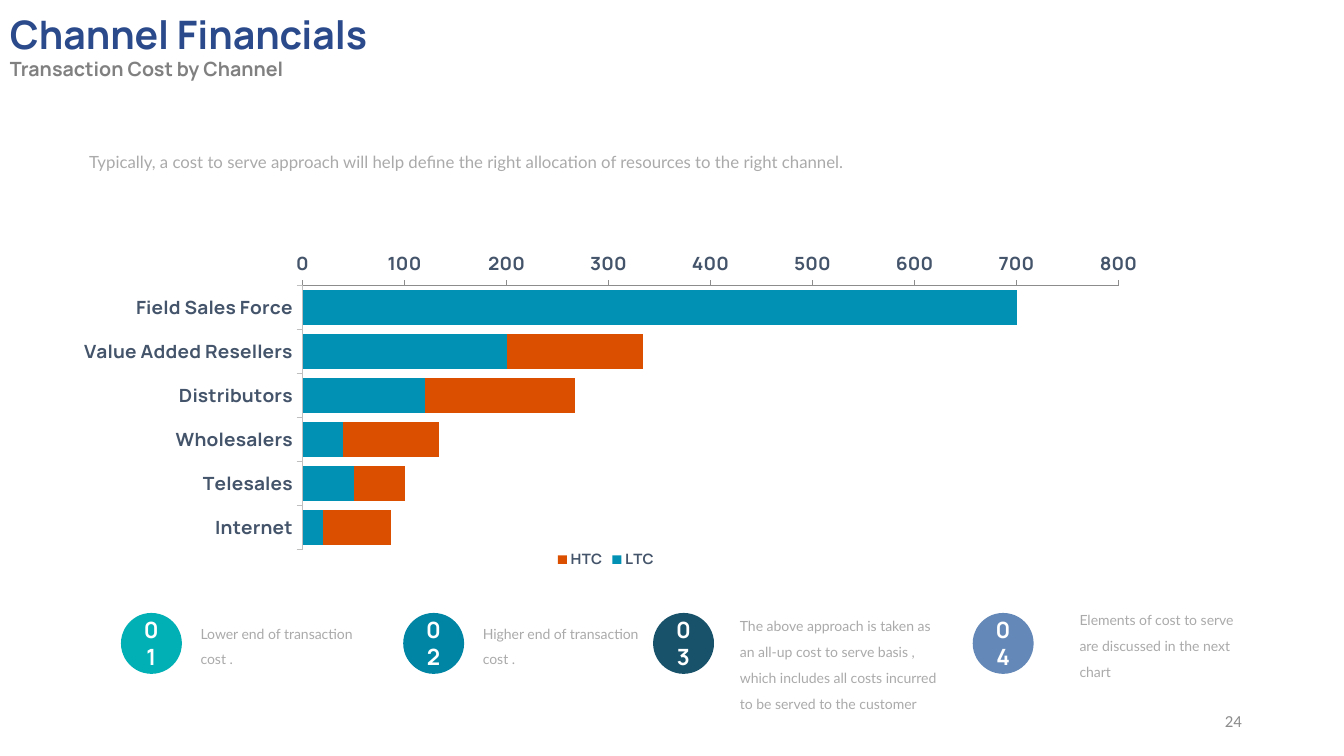
from copy import deepcopy

from lxml import etree
from pptx import Presentation
from pptx.chart.data import CategoryChartData
from pptx.dml.color import RGBColor
from pptx.enum.chart import XL_CHART_TYPE, XL_LEGEND_POSITION, XL_TICK_MARK
from pptx.enum.shapes import MSO_SHAPE
from pptx.enum.text import MSO_ANCHOR, PP_ALIGN
from pptx.oxml.ns import qn
from pptx.util import Pt

BAR_STACKED = XL_CHART_TYPE.BAR_STACKED
LEGEND_BOTTOM = XL_LEGEND_POSITION.BOTTOM
TICK_OUT = XL_TICK_MARK.OUTSIDE
OVAL = MSO_SHAPE.OVAL
TOP, MIDDLE = MSO_ANCHOR.TOP, MSO_ANCHOR.MIDDLE
LEFT, CENTER, RIGHT = PP_ALIGN.LEFT, PP_ALIGN.CENTER, PP_ALIGN.RIGHT
JUSTIFY = PP_ALIGN.JUSTIFY

HEADING, BODY = "Manrope", "Lato"
GREY, SLATE = "AAAAAA", "44546A"
WIDE, TIGHT = (7.2, 3.6), (3.6, 2.16)

CHANNELS = ["Internet", "Telesales", "Wholesalers", "Distributors",
            "Value Added Resellers", "Field Sales Force"]
COSTS = {
    "HTC": ("DB5000", [13, 15, 20, 40, 50, 100]),
    "LTC": ("0091B5", [20, 50, 40, 120, 200, 700]),
}
PLOT_LAYOUT = {"layoutTarget": "inner", "xMode": "edge", "yMode": "edge",
               "x": 0.204, "y": 0.034, "w": 0.796, "h": 0.886}

# Circle left, colour, caption box (left, top, width, height), caption
NOTES = [
    (86.4, "00B0B5", (139.7, 437.8, 126.7, 39.6),
     "Lower end of transaction cost ."),
    (288, "0085A4", (341.3, 437.8, 126.7, 39.6),
     "Higher end of transaction cost ."),
    (466.5, "18526A", (524.9, 432.7, 151.9, 77.8),
     "The above approach is taken as an all-up cost to serve basis , "
     "which includes all costs incurred to be served to the customer"),
    (694.8, "6488B7", (767.5, 428.4, 126.7, 59),
     "Elements of cost to serve are discussed in the next chart"),
]


def color(hex_code):
    return RGBColor.from_string(hex_code)


def set_font(font, size, hex_code, name=HEADING, bold=False):
    font.size, font.name, font.bold = Pt(size), name, bold
    font.color.rgb = color(hex_code)


def add_text(page, box, *lines, align=LEFT, anchor=TOP, insets=WIDE,
             spacing=None):
    """Add a text box; each line is (text, keyword arguments for its font)."""
    frame = page.shapes.add_textbox(*map(Pt, box)).text_frame
    frame.word_wrap = True
    frame.vertical_anchor = anchor
    frame.margin_left = frame.margin_right = Pt(insets[0])
    frame.margin_top = frame.margin_bottom = Pt(insets[1])
    for index, (text, style) in enumerate(lines):
        para = frame.add_paragraph() if index else frame.paragraphs[0]
        para.alignment = align
        if spacing:
            para.line_spacing = Pt(spacing)
        span = para.add_run()
        span.text = text
        set_font(span.font, **style)


def add_heading(page, box):
    add_text(
        page, box,
        ("Channel Financials", {"size": 28, "hex_code": "2A4A8B", "bold": True}),
        ("Transaction Cost by Channel",
         {"size": 14, "hex_code": "808080", "bold": True}))


def set_value(parent, tag, value):
    parent.find(qn(tag)).set("val", str(value))


def place_plot(plot_area):
    """Give the plot area a fixed inner layout."""
    layout = plot_area.find(qn("c:layout"))
    if layout is None:
        layout = etree.Element(qn("c:layout"))
        plot_area.insert(0, layout)
    manual = etree.SubElement(layout, qn("c:manualLayout"))
    for tag, value in PLOT_LAYOUT.items():
        etree.SubElement(manual, qn("c:" + tag)).set("val", str(value))


def split_second_series(plot_area):
    """Move the second series to its own axes, with values along the top."""
    first_bars = plot_area.find(qn("c:barChart"))
    second_bars = deepcopy(first_bars)
    first_bars.remove(first_bars.findall(qn("c:ser"))[1])
    second_bars.remove(second_bars.find(qn("c:ser")))
    first_bars.addnext(second_bars)

    category_id, value_id = "50010", "50020"
    for axis_id, value in zip(second_bars.findall(qn("c:axId")),
                              (category_id, value_id)):
        axis_id.set("val", value)

    category_axis = plot_area.find(qn("c:catAx"))
    value_axis = plot_area.find(qn("c:valAx"))
    top_axis, hidden_axis = deepcopy(value_axis), deepcopy(category_axis)
    value_axis.addnext(top_axis)
    top_axis.addnext(hidden_axis)
    for axis, own_id, other_id, hidden in (
            (top_axis, value_id, category_id, 0),
            (hidden_axis, category_id, value_id, 1)):
        set_value(axis, "c:axId", own_id)
        set_value(axis, "c:crossAx", other_id)
        set_value(axis, "c:delete", hidden)
    set_value(top_axis, "c:axPos", "t")
    set_value(top_axis, "c:crosses", "max")
    set_value(top_axis.find(qn("c:scaling")), "c:max", 800)
    set_value(value_axis, "c:delete", 1)


def add_cost_chart(page, box):
    data = CategoryChartData()
    data.categories = CHANNELS
    for name, (_, values) in COSTS.items():
        data.add_series(name, values)
    chart = page.shapes.add_chart(BAR_STACKED, *map(Pt, box), data).chart
    chart.has_title = False
    set_font(chart.font, 14, SLATE, bold=True)

    chart.has_legend = True
    chart.legend.position = LEGEND_BOTTOM
    chart.legend.include_in_layout = False
    set_font(chart.legend.font, 11, SLATE, bold=True)

    plot = chart.plots[0]
    plot.gap_width, plot.overlap, plot.vary_by_categories = 24, 100, False
    for series in plot.series:
        series.format.fill.solid()
        series.format.fill.fore_color.rgb = color(COSTS[series.name][0])

    for axis, line_color in ((chart.category_axis, "BFBFBF"),
                             (chart.value_axis, "8C8C8C")):
        axis.has_major_gridlines = False
        axis.major_tick_mark = TICK_OUT
        axis.format.line.color.rgb = color(line_color)
        set_font(axis.tick_labels.font, 14, SLATE, bold=True)
    chart.value_axis.minimum_scale = 0
    chart.value_axis.maximum_scale = 120

    plot_area = chart.element.find(".//" + qn("c:plotArea"))
    place_plot(plot_area)
    split_second_series(plot_area)


def add_note(page, number, left, fill, caption_box, caption):
    top, size = 437.8, 43.5
    circle = page.shapes.add_shape(OVAL, *map(Pt, (left, top, size, size)))
    circle.shadow.inherit = False
    circle.fill.solid()
    circle.fill.fore_color.rgb = color(fill)
    circle.line.fill.background()
    add_text(page, (left + 6.2, top + 8, 31, 26.6),
             (f"{number:02}", {"size": 16, "hex_code": "FFFFFF", "bold": True}),
             align=CENTER, anchor=MIDDLE)
    add_text(page, caption_box,
             (caption, {"size": 10, "hex_code": GREY, "name": BODY}),
             insets=TIGHT, spacing=18.5)


def main():
    deck = Presentation()
    deck.slide_width, deck.slide_height = Pt(960), Pt(540)
    page = deck.slides.add_slide(deck.slide_layouts[6])
    add_text(page, (60, 102.2, 840, 21),
             ("Typically, a cost to serve approach will help define the right "
              "allocation of resources to the right channel.",
              {"size": 12, "hex_code": GREY, "name": BODY}),
             align=JUSTIFY, insets=TIGHT, spacing=18.5)
    add_cost_chart(page, (60, 179.3, 752.4, 230.4))
    for number, note in enumerate(NOTES, start=1):
        add_note(page, number, *note)
    add_heading(page, (0, 3.6, 620, 63.4))
    add_text(page, (678.2, 500.4, 216, 28.8),
             ("24", {"size": 12, "hex_code": "8C8C8C", "name": "Calibri"}),
             align=RIGHT, anchor=MIDDLE)
    deck.save("out.pptx")


if __name__ == "__main__":
    main()
